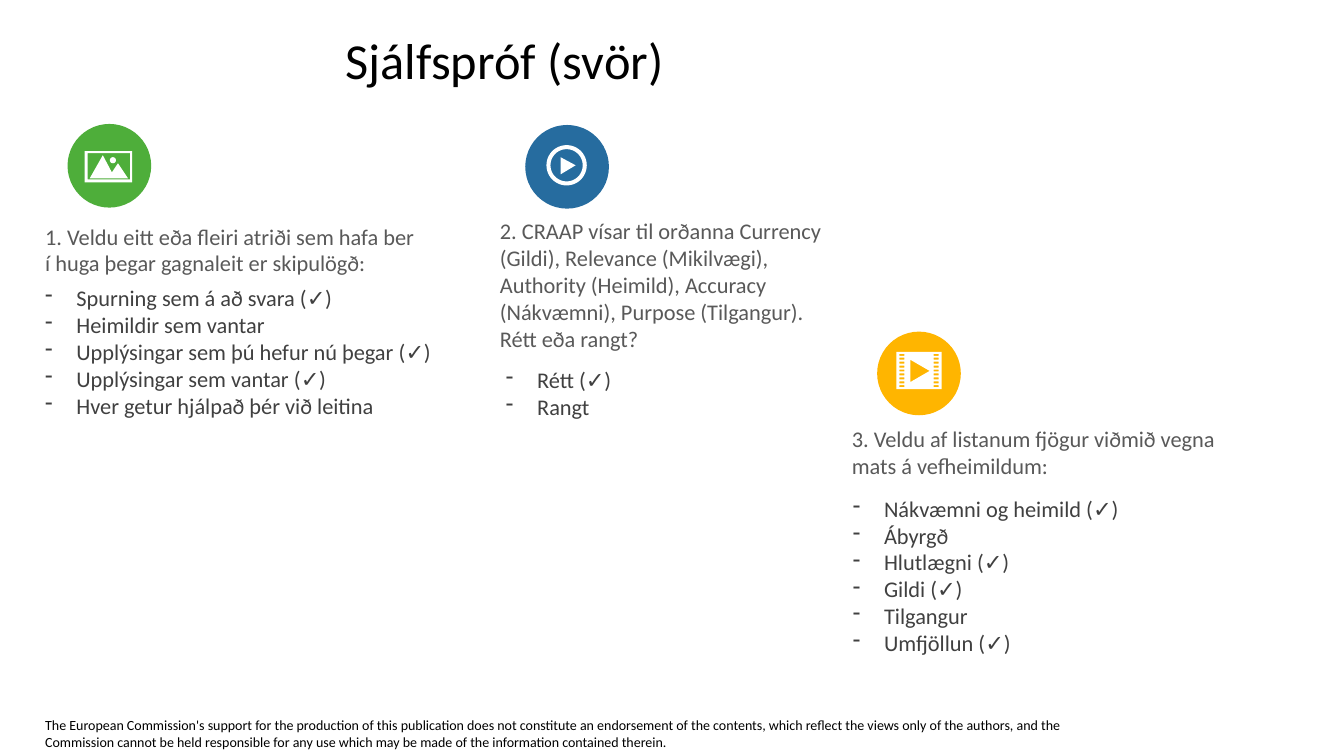
"""Build the self-test answer slide with three questions and their icons."""
from math import cos, pi, sin

from lxml.etree import SubElement
from pptx import Presentation
from pptx.dml.color import RGBColor
from pptx.enum.shapes import MSO_SHAPE
from pptx.enum.text import MSO_ANCHOR
from pptx.oxml.ns import qn
from pptx.util import Pt

PX = 9144
COLORS = {
    "black": "000000", "question": "595959", "answer": "404040", "white": "FFFFFF",
    "green": "4EAE3A", "blue": "266C9F", "yellow": "FFB500",
}
INDENT = 31
BADGE = 83

presentation = Presentation()
presentation.slide_width = 1333 * PX
presentation.slide_height = 750 * PX
slide = presentation.slides.add_slide(presentation.slide_layouts[6])


def rectangle(left, top, right, bottom):
    return [(left, top), (right, top), (right, bottom), (left, bottom)]


def circle(x, y, radius, steps=48):
    angles = [2 * pi * step / steps for step in range(steps)]
    return [(x + radius * cos(angle), y + radius * sin(angle)) for angle in angles]


questions = [
    ("1. Veldu eitt eða fleiri atriði sem hafa ber í huga þegar gagnaleit er skipulögð:",
     (35, 216, 394, 38), (35, 277, 437, 91),
     ["Spurning sem á að svara (✓)", "Heimildir sem vantar",
      "Upplýsingar sem þú hefur nú þegar (✓)", "Upplýsingar sem vantar (✓)",
      "Hver getur hjálpað þér við leitina"]),
    ("2. CRAAP vísar til orðanna Currency (Gildi), Relevance (Mikilvægi), Authority (Heimild), "
     "Accuracy (Nákvæmni), Purpose (Tilgangur). Rétt eða rangt?",
     (486, 211, 347, 43), (492, 358, 240, 91),
     ["Rétt (✓)", "Rangt"]),
    ("3. Veldu af listanum fjögur viðmið vegna mats á vefheimildum:",
     (835, 417, 380, 23), (836, 486, 321, 91),
     ["Nákvæmni og heimild (✓)", "Ábyrgð", "Hlutlægni (✓)", "Gildi (✓)",
      "Tilgangur", "Umfjöllun (✓)"]),
]

title = ((333, 31, 947, 79), ["Sjálfspróf (svör)"], 36, "black",
         {"anchor": MSO_ANCHOR.MIDDLE}, {"line_spacing": 0.9}, False)
footer = ((35, 706, 1046, 44), [
    "The European Commission's support for the production of this publication does not "
    "constitute an endorsement of the contents, which reflect the views only of the authors, "
    "and the Commission cannot be held responsible for any use which may be made of the "
    "information contained therein."], 10, "black", {}, {}, False)
texts = [title, footer]
for question, question_box, answer_box, answers in questions:
    texts.append((question_box, [question], 16, "question", {}, {}, False))
    texts.append((answer_box, answers, 16, "answer", {}, {}, True))

for box, lines, size, color, frame_format, paragraph_format, bulleted in texts:
    frame = slide.shapes.add_textbox(*[value * PX for value in box]).text_frame
    for name, value in {"word_wrap": True, **frame_format}.items():
        setattr(frame, name, value)
    frame.text = "\n".join(lines)
    for paragraph in frame.paragraphs:
        if bulleted:
            properties = paragraph._p.get_or_add_pPr()
            properties.set("marL", str(INDENT * PX))
            properties.set("indent", str(-INDENT * PX))
            SubElement(properties, qn("a:buChar"), char="-")
        for name, value in paragraph_format.items():
            setattr(paragraph, name, value)
        for name, value in {"name": "Calibri", "size": Pt(size)}.items():
            setattr(paragraph.font, name, value)
        paragraph.font.color.rgb = RGBColor.from_string(COLORS[color])

picture_icon = [
    rectangle(84, 150, 131, 181), rectangle(87, 152, 129, 178),
    [(102, 154), (111, 171), (117, 162), (127, 177), (89, 177)],
    circle(112, 159, 3),
]
play_icon = [
    circle(562, 164, 20), circle(562, 164, 16),
    [(556, 156), (571, 164), (556, 173)],
]
film_icon = [rectangle(889, 349, 934, 386), [(903, 357), (903, 379), (922, 368)]]
for row in range(9):
    hole_top = 351 + 3.9 * row
    for hole_left in (892, 926):
        film_icon.append(rectangle(hole_left, hole_top, hole_left + 5, hole_top + 2))

badges = [
    (67, 123, "green", picture_icon),
    (521, 124, "blue", play_icon),
    (870, 329, "yellow", film_icon),
]
for left, top, color, outlines in badges:
    badge = slide.shapes.add_shape(
        MSO_SHAPE.OVAL, left * PX, top * PX, BADGE * PX, BADGE * PX)
    contours = [[(x * PX, y * PX) for x, y in outline] for outline in outlines]
    builder = slide.shapes.build_freeform(*contours[0][0])
    for contour in contours:
        builder.move_to(*contour[0])
        builder.add_line_segments(contour[1:], close=True)
    icon = builder.convert_to_shape()
    for shape, fill in ((badge, color), (icon, "white")):
        shape.shadow.inherit = False
        shape.fill.solid()
        shape.fill.fore_color.rgb = RGBColor.from_string(COLORS[fill])
        shape.line.fill.background()

presentation.save("out.pptx")
